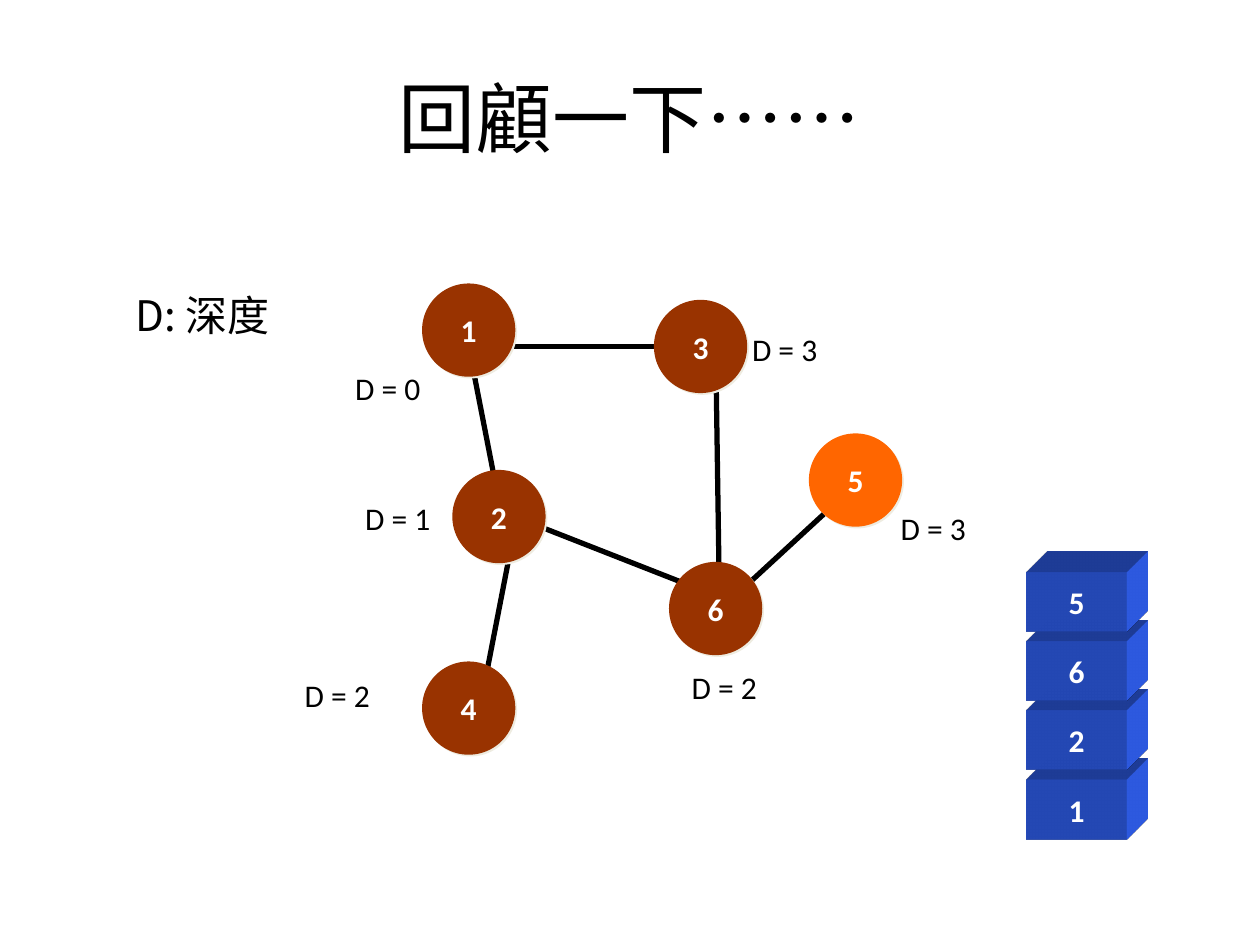
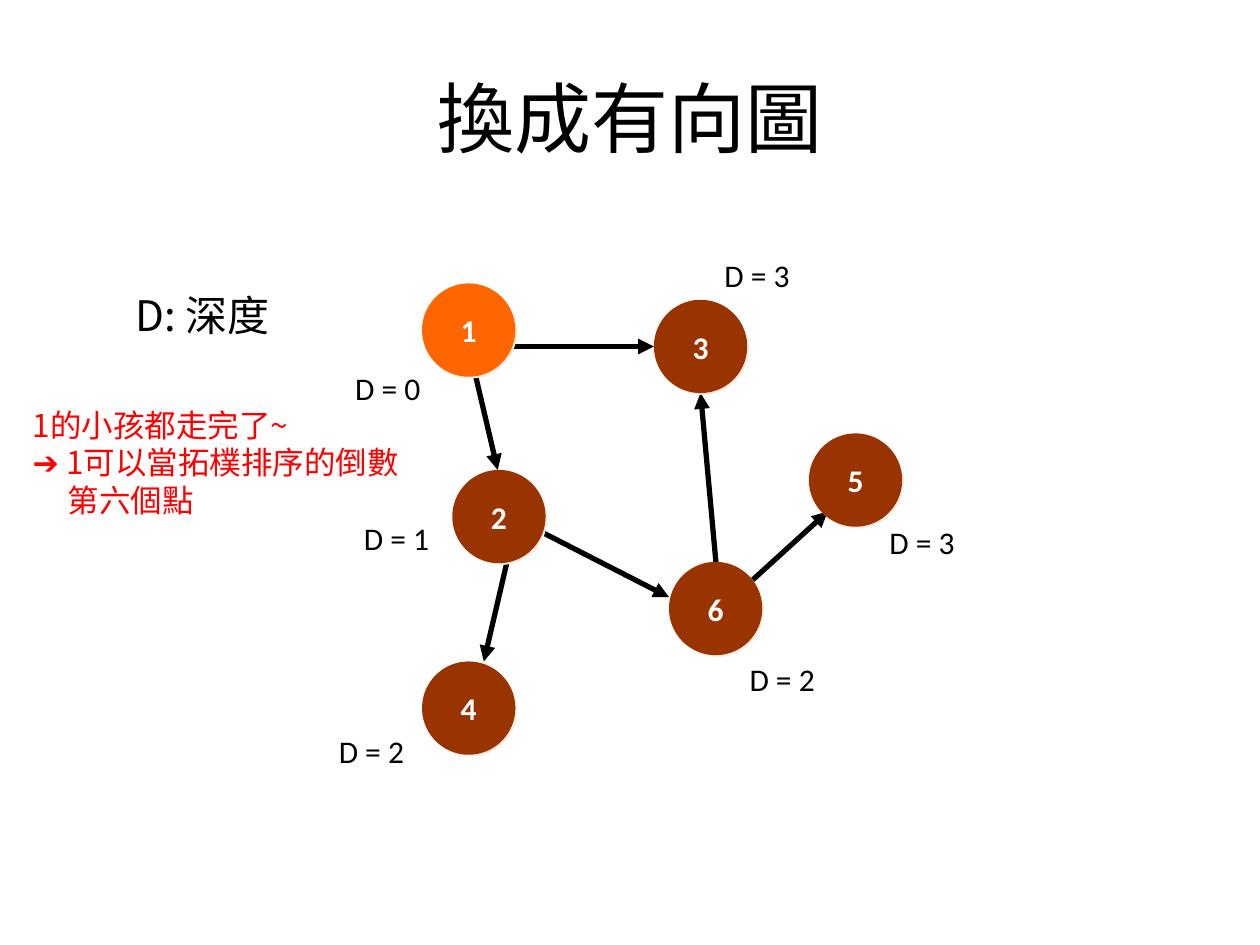
from lxml.etree import SubElement
from pptx import Presentation
from pptx.dml.color import RGBColor
from pptx.enum.shapes import MSO_CONNECTOR as Connector, MSO_SHAPE as Shape
from pptx.enum.text import MSO_ANCHOR as Anchor, MSO_AUTO_SIZE as AutoSize, PP_ALIGN as Align
from pptx.oxml import parse_xml
from pptx.oxml.ns import nsdecls, qn
from pptx.util import Inches, Pt

# Shared look
BLACK = RGBColor(0x00, 0x00, 0x00)
WHITE = RGBColor(0xFF, 0xFF, 0xFF)
RED = RGBColor(0xFF, 0x00, 0x00)
VISITED = RGBColor(0x99, 0x33, 0x00)
CURRENT = RGBColor(0xFF, 0x66, 0x00)
STACK_BLUE = RGBColor(0x33, 0x66, 0xFF)
SHADOW = RGBColor(0xEE, 0xEC, 0xE1)
LATIN, CJK = "Calibri", "Noto Sans CJK SC"

TITLE_TEXT = {"name": CJK, "size": Pt(44), "color": BLACK}
LEGEND_TEXT = {"name": CJK, "size": Pt(24), "color": BLACK}
NOTE_TEXT = {"name": CJK, "size": Pt(18), "color": RED}
DEPTH_TEXT = {"name": LATIN, "size": Pt(18), "color": BLACK}
MARK_TEXT = {"name": LATIN, "size": Pt(18), "bold": True, "color": WHITE}

# Graph layout in inches: top left corner of each node
NODE_SIZE = 0.74
NODES = {1: (3.35, 2.25), 3: (5.19, 2.38), 2: (3.59, 3.73),
         4: (3.35, 5.25), 6: (5.31, 4.46), 5: (6.42, 3.44)}

UNDIRECTED_EDGES = [
    ((3.72, 2.75), (3.96, 3.98)), ((4.08, 4.22), (3.82, 5.56)),
    ((3.84, 2.75), (5.32, 2.75)), ((5.68, 2.75), (5.71, 4.77)),
    ((5.79, 4.77), (6.81, 3.83)), ((5.79, 4.77), (3.98, 4.06))]
# Each directed edge runs from parent to child
DIRECTED_EDGES = [
    ((3.72, 2.75), (3.95, 3.73)), ((4.08, 4.22), (3.84, 5.25)),
    ((3.84, 2.75), (5.19, 2.75)), ((5.71, 4.77), (5.56, 3.12)),
    ((5.79, 4.77), (6.57, 4.06)), ((3.98, 4.06), (5.31, 4.74))]

# Depth of each label and its top left corner
UNDIRECTED_DEPTHS = [(0, 2.72, 2.88), (1, 2.8, 3.91), (2, 2.32, 5.32),
                     (2, 5.39, 5.25), (3, 5.87, 2.57), (3, 7.05, 3.99)]
DIRECTED_DEPTHS = [(0, 2.72, 2.88), (1, 2.79, 4.07), (2, 2.59, 5.76),
                   (2, 5.85, 5.19), (3, 5.65, 1.98), (3, 6.96, 4.1)]

STACK = [1, 2, 6, 5]
STACK_LEFT, STACK_BOTTOM_BOX, STACK_STEP = 8.15, 6.19, 0.55

EXTRUSION = (
    f'<a:scene3d {nsdecls("a")}><a:camera prst="legacyObliqueTopRight"/>'
    '<a:lightRig rig="legacyFlat3" dir="b"/></a:scene3d>',
    f'<a:sp3d {nsdecls("a")} extrusionH="430200" prstMaterial="legacyMatte">'
    '<a:bevelT w="13500" h="13500" prst="angle"/>'
    '<a:bevelB w="13500" h="13500" prst="angle"/>'
    f'<a:extrusionClr><a:srgbClr val="{STACK_BLUE}"/></a:extrusionClr></a:sp3d>')


def format_text(paragraph, style):
    for run in paragraph.runs:
        for key, value in style.items():
            if key == "color":
                run.font.color.rgb = value
            else:
                setattr(run.font, key, value)
        east_asian = SubElement(run.font._element, qn("a:ea"))
        east_asian.set("typeface", style["name"])


def write(frame, text, style, align=Align.LEFT, **frame_format):
    for key, value in frame_format.items():
        setattr(frame, key, value)
    frame.text = text
    for paragraph in frame.paragraphs:
        paragraph.alignment = align
        format_text(paragraph, style)


def add_text(slide, box, text, style, **options):
    frame = slide.shapes.add_textbox(*map(Inches, box)).text_frame
    write(frame, text, style, **options)
    return frame


def add_title(slide, text):
    add_text(slide, (0.5, 0.3, 9, 1.25), text, TITLE_TEXT, align=Align.CENTER,
             word_wrap=True, vertical_anchor=Anchor.MIDDLE)


def add_label(slide, box, text, style):
    add_text(slide, box, text, style, word_wrap=False,
             auto_size=AutoSize.SHAPE_TO_FIT_TEXT)


def add_marked_shape(shapes, preset, box, mark, fill):
    marked = shapes.add_shape(preset, *map(Inches, box))
    marked.shadow.inherit = False
    marked.fill.solid()
    marked.fill.fore_color.rgb = fill
    marked.line.fill.background()
    write(marked.text_frame, str(mark), MARK_TEXT, align=Align.CENTER,
          word_wrap=False, vertical_anchor=Anchor.MIDDLE)
    return marked


def add_node(shapes, number, fill):
    box = (*NODES[number], NODE_SIZE, NODE_SIZE)
    node = add_marked_shape(shapes, Shape.OVAL, box, number, fill)
    effects = node._element.spPr.find(qn("a:effectLst"))
    effects.append(parse_xml(
        f'<a:outerShdw {nsdecls("a")} dist="17961" dir="2700000" algn="ctr" '
        f'rotWithShape="0"><a:srgbClr val="{SHADOW}"/></a:outerShdw>'))


def add_edge(shapes, start, end, directed):
    edge = shapes.add_connector(Connector.STRAIGHT, *map(Inches, start + end))
    edge.line.width = Pt(3)
    edge.line.color.rgb = BLACK
    if directed:
        SubElement(edge.line._get_or_add_ln(), qn("a:tailEnd")).set("type", "triangle")
    SubElement(edge._element.spPr, qn("a:effectLst"))


def add_graph(slide, edges, current, directed=False):
    shapes = slide.shapes.add_group_shape().shapes
    for start, end in edges:
        add_edge(shapes, start, end, directed)
    for number in NODES:
        add_node(shapes, number, CURRENT if number == current else VISITED)


def add_depths(slide, depths):
    add_label(slide, (0.98, 2.25, 1.37, 0.5), "D: 深度", LEGEND_TEXT)
    for depth, left, top in depths:
        add_label(slide, (left, top, 0.81, 0.4), f"D = {depth}", DEPTH_TEXT)


def add_stack(slide):
    for level, number in enumerate(STACK):
        box = (STACK_LEFT, STACK_BOTTOM_BOX - level * STACK_STEP, 0.79, 0.47)
        block = add_marked_shape(slide.shapes, Shape.RECTANGLE, box, number, STACK_BLUE)
        for part in EXTRUSION:
            block._element.spPr.append(parse_xml(part))


def add_note(slide):
    note = add_text(slide, (0.16, 3.17, 3.32, 1.01),
                    "1的小孩都走完了~\n➔ 1可以當拓樸排序的倒數\v第六個點", NOTE_TEXT,
                    word_wrap=True, auto_size=AutoSize.SHAPE_TO_FIT_TEXT)
    # Hanging indent lines the last line up with the text after the arrow
    hanging = note.paragraphs[1]._p.get_or_add_pPr()
    hanging.set("marL", str(Inches(0.28)))
    hanging.set("indent", str(Inches(-0.28)))


def main():
    deck = Presentation()
    deck.slide_width, deck.slide_height = Inches(10), Inches(7.5)
    blank = deck.slide_layouts[6]

    # Review: undirected graph with its stack
    review = deck.slides.add_slide(blank)
    add_title(review, "回顧一下……")
    add_graph(review, UNDIRECTED_EDGES, current=5)
    add_depths(review, UNDIRECTED_DEPTHS)
    add_stack(review)

    # Directed graph
    directed = deck.slides.add_slide(blank)
    add_title(directed, "換成有向圖")
    add_graph(directed, DIRECTED_EDGES, current=1, directed=True)
    add_depths(directed, DIRECTED_DEPTHS)
    add_note(directed)

    deck.save("out.pptx")


if __name__ == "__main__":
    main()
